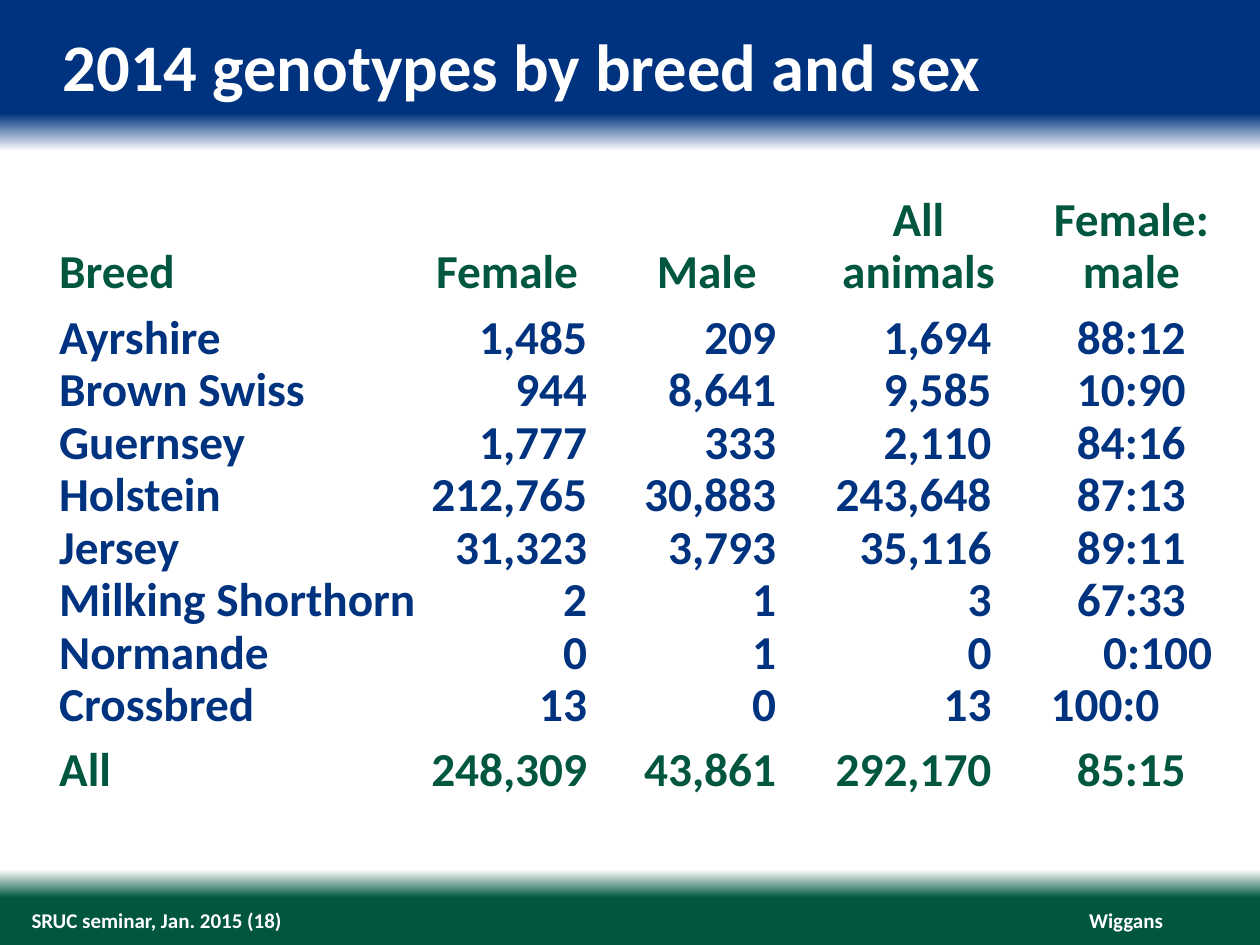
from lxml import etree
from pptx import Presentation
from pptx.dml.color import RGBColor
from pptx.enum.text import MSO_ANCHOR, PP_ALIGN
from pptx.oxml.ns import qn
from pptx.util import Inches, Pt

LEFT, CENTER, RIGHT = PP_ALIGN.LEFT, PP_ALIGN.CENTER, PP_ALIGN.RIGHT
TOP, MIDDLE, BOTTOM = MSO_ANCHOR.TOP, MSO_ANCHOR.MIDDLE, MSO_ANCHOR.BOTTOM

NAVY = RGBColor(0x00, 0x33, 0x7F)
GREEN = RGBColor(0x00, 0x56, 0x3F)
WHITE = RGBColor(0xFF, 0xFF, 0xFF)

FONT = "Calibri"
LINE = Pt(30)
GROUP_GAP = Inches(0.1)
SLIDE_WIDTH, SLIDE_HEIGHT = Inches(10), Inches(7.5)

BANDS = [(0, NAVY), (12, NAVY), (16, WHITE), (92, WHITE), (95, GREEN), (100, GREEN)]

COLUMN_WIDTHS = [2.99, 1.27, 1.65, 1.96, 1.42]
HEADER_INSETS = [(0.07, 0.07), (0, 0), (0.25, 0), (0, 0), (0.07, 0.07)]
BODY_INSETS = [(0.07, 0.07), (0, 0), (0, 0.15), (0, 0.4), (0.07, 0.07)]
HEADER_ALIGNS = [LEFT, CENTER, CENTER, CENTER, CENTER]
BODY_ALIGNS = [LEFT, RIGHT, RIGHT, RIGHT, CENTER]
RATIO_ALIGNS = {"0:100": RIGHT, "100:0": LEFT}

HEADER = ["Breed", "Female", "Male", "All\nanimals", "Female:\nmale"]
BREEDS = [
    ["Ayrshire", "1,485", "209", "1,694", "88:12"],
    ["Brown Swiss", "944", "8,641", "9,585", "10:90"],
    ["Guernsey", "1,777", "333", "2,110", "84:16"],
    ["Holstein", "212,765", "30,883", "243,648", "87:13"],
    ["Jersey", "31,323", "3,793", "35,116", "89:11"],
    ["Milking Shorthorn", "2", "1", "3", "67:33"],
    ["Normande", "0", "1", "0", "0:100"],
    ["Crossbred", "13", "0", "13", "100:0"],
]
TOTALS = ["All", "248,309", "43,861", "292,170", "85:15"]


def paint_background(slide):
    """Fill the slide with a vertical gradient of the colour bands."""
    fill = slide.background.fill
    fill.gradient()
    fill.gradient_angle = 270
    stops = slide.element.find(".//" + qn("a:gsLst"))
    for stop in list(stops):
        stops.remove(stop)
    for percent, color in BANDS:
        stop = etree.SubElement(stops, qn("a:gs"), pos=str(percent * 1000))
        etree.SubElement(stop, qn("a:srgbClr"), val=str(color))


def style_paragraph(paragraph, size, color, align):
    """Align a paragraph and set the font of its runs."""
    paragraph.alignment = align
    for run in paragraph.runs:
        run.font.name = FONT
        run.font.size = Pt(size)
        run.font.bold = True
        run.font.color.rgb = color


def add_label(slide, text, left, top, width, height, size, anchor, align=LEFT, wrap=True):
    """Add a line of white text without margins."""
    label = slide.shapes.add_textbox(Inches(left), Inches(top), Inches(width), Inches(height))
    frame = label.text_frame
    frame.margin_left = frame.margin_right = frame.margin_top = frame.margin_bottom = 0
    frame.word_wrap = wrap
    frame.vertical_anchor = anchor
    frame.text = text
    style_paragraph(frame.paragraphs[0], size, WHITE, align)


def fill_cell(cell, text, color, align, insets, gap):
    """Write a bottom-anchored table cell."""
    cell.fill.background()
    cell.vertical_anchor = BOTTOM
    cell.margin_left, cell.margin_right = map(Inches, insets)
    cell.margin_top, cell.margin_bottom = gap, 0
    cell.text_frame.text = text
    for paragraph in cell.text_frame.paragraphs:
        paragraph.line_spacing = LINE
        style_paragraph(paragraph, 27, color, align)


def fill_row(table, index, texts, color, aligns, insets, gap=0, lines=1):
    """Write one table row and set its height from its lines."""
    table.rows[index].height = LINE * lines + gap
    for column, text in enumerate(texts):
        align = RATIO_ALIGNS.get(text, aligns[column])
        fill_cell(table.cell(index, column), text, color, align, insets[column], gap)


def add_genotype_table(slide):
    """Add the table of genotype counts by breed and sex."""
    row_count = len(BREEDS) + 2
    table = slide.shapes.add_table(
        row_count, len(HEADER), Inches(0.4), Inches(1.56), Inches(sum(COLUMN_WIDTHS)), LINE * row_count
    ).table
    table.first_row = table.horz_banding = False
    for column, width in zip(table.columns, COLUMN_WIDTHS):
        column.width = Inches(width)
    fill_row(table, 0, HEADER, GREEN, HEADER_ALIGNS, HEADER_INSETS, lines=2)
    for index, breed in enumerate(BREEDS, start=1):
        gap = GROUP_GAP if index == 1 else 0
        fill_row(table, index, breed, NAVY, BODY_ALIGNS, BODY_INSETS, gap)
    fill_row(table, row_count - 1, TOTALS, GREEN, BODY_ALIGNS, BODY_INSETS, GROUP_GAP)


def main():
    """Build the slide and save it."""
    deck = Presentation()
    deck.slide_width, deck.slide_height = SLIDE_WIDTH, SLIDE_HEIGHT
    slide = deck.slides.add_slide(deck.slide_layouts[6])
    paint_background(slide)
    add_label(slide, "Wiggans", 8.64, 7.2, 0.59, 0.2, 12, MIDDLE, RIGHT, wrap=False)
    add_label(slide, "SRUC seminar, Jan. 2015 (18)", 0.25, 7.2, 7.42, 0.2, 12, MIDDLE)
    add_label(slide, "2014 genotypes by breed and sex", 0.5, 0.2, 9, 0.64, 38, TOP)
    add_genotype_table(slide)
    deck.save("out.pptx")


if __name__ == "__main__":
    main()
